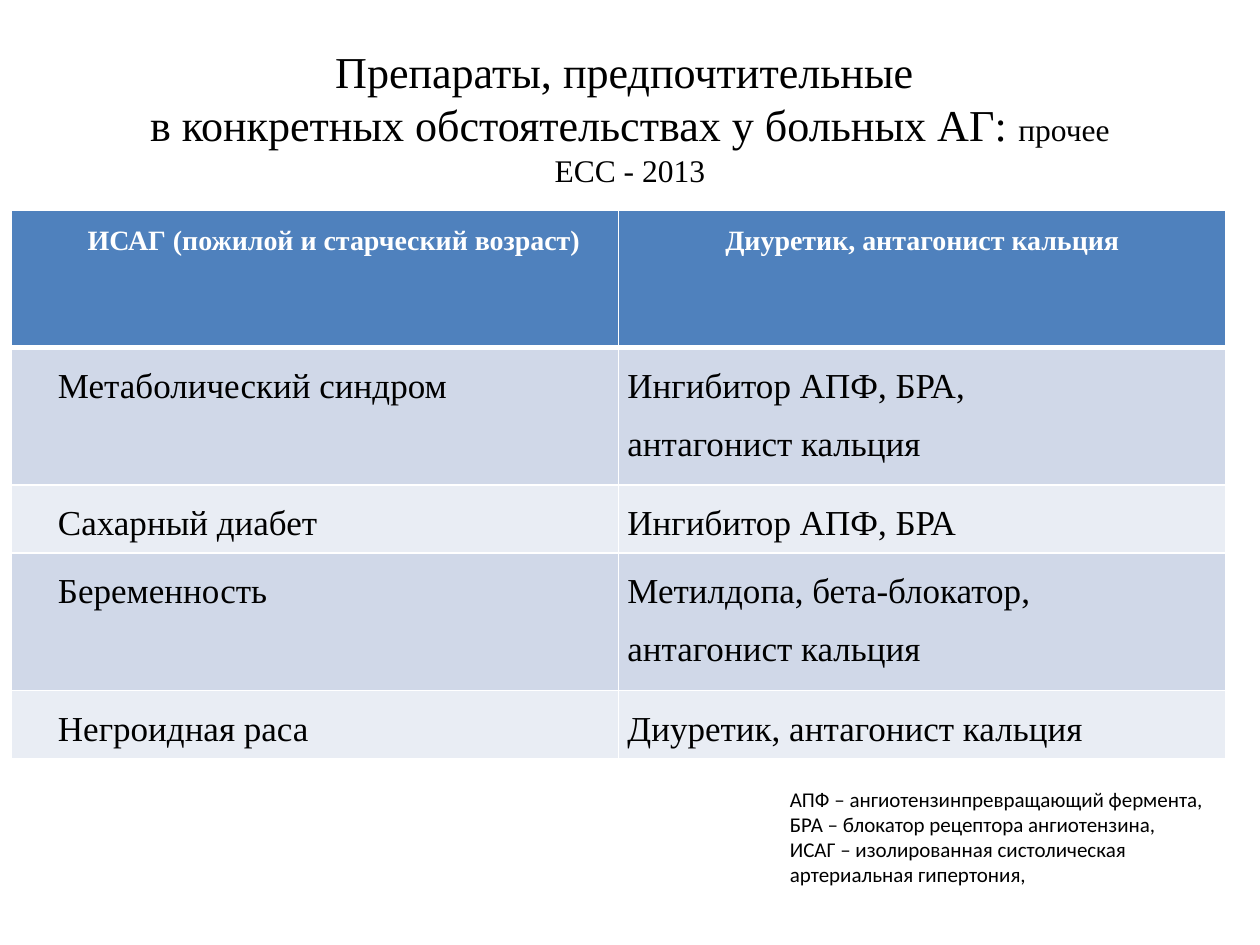
import dataclasses
import typing

import lxml.etree
import pptx
import pptx.dml.color
import pptx.enum.text
import pptx.oxml.ns
import pptx.util

Inches = pptx.util.Inches
Pt = pptx.util.Pt
Color = pptx.dml.color.RGBColor
Align = pptx.enum.text.PP_ALIGN
Anchor = pptx.enum.text.MSO_ANCHOR
qn = pptx.oxml.ns.qn

BLACK = Color(0x00, 0x00, 0x00)
WHITE = Color(0xFF, 0xFF, 0xFF)
BLUE = Color(0x4F, 0x81, 0xBD)
BANDS = (Color(0xD0, 0xD8, 0xE8), Color(0xE9, 0xED, 0xF4))
SERIF = "Times New Roman"


@dataclasses.dataclass
class Style:
    size: float
    color: Color = BLACK
    name: str = SERIF
    bold: bool = False


@dataclasses.dataclass
class Row:
    height: float
    case: str
    drugs: tuple[str, ...]


BIG = Style(25.2)
SMALL = Style(18)
HEAD = Style(16, WHITE, bold=True)
BODY = Style(20)
NOTE = Style(12, name="Calibri")

TITLE = (
    (("Препараты, предпочтительные ", BIG),),
    (("в конкретных обстоятельствах у больных АГ: ", BIG), ("прочее", SMALL)),
    (("ЕСС - 2013", SMALL),),
)
ROWS = (
    Row(1.09, "ИСАГ (пожилой и старческий возраст)",
        ("Диуретик, антагонист кальция",)),
    Row(1.09, "Метаболический синдром",
        ("Ингибитор АПФ, БРА, ", "антагонист кальция")),
    Row(0.54, "Сахарный диабет", ("Ингибитор АПФ, БРА",)),
    Row(1.09, "Беременность",
        ("Метилдопа, бета-блокатор, ", "антагонист кальция")),
    Row(0.54, "Негроидная раса", ("Диуретик, антагонист кальция",)),
)
NOTES = (
    "АПФ – ангиотензинпревращающий фермента,",
    "БРА – блокатор рецептора ангиотензина,",
    "ИСАГ – изолированная систолическая артериальная гипертония,",
)


def apply(target: typing.Any, values: dict[str, typing.Any]) -> None:
    for key, value in values.items():
        setattr(target, key, value)


def add_run(para: typing.Any, text: str, style: Style) -> None:
    run = para.add_run()
    run.text = text
    apply(run.font, {"size": Pt(style.size), "name": style.name,
                     "bold": style.bold})
    run.font.color.rgb = style.color


def add_paras(frame: typing.Any, lines: typing.Sequence[str], style: Style,
              form: dict[str, typing.Any], indent: float = 0) -> None:
    for i, line in enumerate(lines):
        para = frame.add_paragraph() if i else frame.paragraphs[0]
        apply(para, form)
        if indent:
            para._p.get_or_add_pPr().set("marL", str(Inches(indent)))
        add_run(para, line, style)


def add_box(slide: typing.Any, left: float, top: float, width: float,
            height: float, anchor: Anchor) -> typing.Any:
    box = slide.shapes.add_textbox(Inches(left), Inches(top),
                                   Inches(width), Inches(height))
    apply(box.text_frame, {"word_wrap": True, "vertical_anchor": anchor})
    return box.text_frame


def add_edges(cell: typing.Any, widths: dict[str, float]) -> None:
    """Draw white cell borders; widths maps each side to points."""
    props = cell._tc.get_or_add_tcPr()
    for i, (side, width) in enumerate(widths.items()):
        line = lxml.etree.Element(qn("a:ln" + side), w=str(Pt(width)))
        fill = lxml.etree.SubElement(line, qn("a:solidFill"))
        lxml.etree.SubElement(fill, qn("a:srgbClr"), val=str(WHITE))
        props.insert(i, line)


def add_title(slide: typing.Any) -> None:
    frame = add_box(slide, 0.5, 0.3, 9, 1.25, Anchor.MIDDLE)
    para = frame.paragraphs[0]
    para.alignment = Align.CENTER
    for i, line in enumerate(TITLE):
        if i:
            para.add_line_break()
        for text, style in line:
            add_run(para, text, style)


def add_grid(slide: typing.Any) -> None:
    total = sum(row.height for row in ROWS)
    table = slide.shapes.add_table(len(ROWS), 2, Inches(0.09), Inches(1.67),
                                   Inches(9.64), Inches(total)).table
    for r, row in enumerate(ROWS):
        table.rows[r].height = Inches(row.height)
        style = BODY if r else HEAD
        form = {"alignment": Align.JUSTIFY if r else Align.CENTER,
                "line_spacing": 1.5}
        edges = {"L": 1, "R": 1, "T": 3 if r == 1 else 1, "B": 1 if r else 3}
        for c, lines in enumerate(((row.case,), row.drugs)):
            cell = table.cell(r, c)
            apply(cell, {"margin_left": Inches(0.07), "margin_top": 0,
                         "margin_right": Inches(0.07), "margin_bottom": 0})
            cell.fill.solid()
            cell.fill.fore_color.rgb = BANDS[(r - 1) % 2] if r else BLUE
            add_edges(cell, edges)
            add_paras(cell.text_frame, lines, style, form, 0 if c else 0.3)


def main() -> None:
    deck = pptx.Presentation()
    apply(deck, {"slide_width": Inches(10), "slide_height": Inches(7.5)})
    slide = deck.slides.add_slide(deck.slide_layouts[6])
    add_title(slide)
    add_grid(slide)
    notes = add_box(slide, 6.17, 6.19, 3.71, 1.11, Anchor.TOP)
    add_paras(notes, NOTES, NOTE, {"alignment": Align.LEFT})
    deck.save("out.pptx")


if __name__ == "__main__":
    main()
